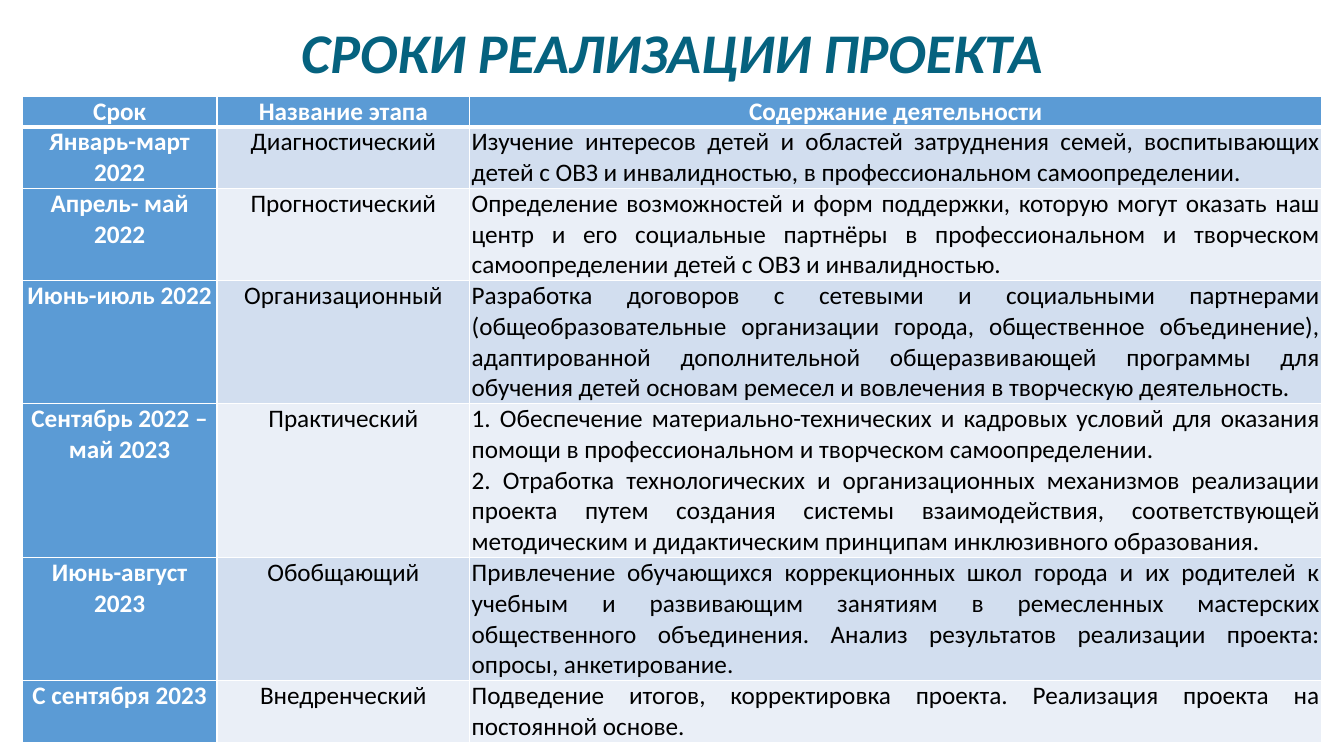
import pptx
import pptx.dml.color
import pptx.enum.text
import pptx.oxml
import pptx.oxml.ns
import pptx.util
from dataclasses import dataclass

ALIGN = pptx.enum.text.PP_ALIGN
WIDTH, HEIGHT = pptx.util.Inches(13.33), pptx.util.Inches(7.5)
FONT = "Calibri"
WHITE, BLACK, TEAL, BLUE = "FFFFFF", "000000", "05627F", "5B9BD5"
BANDS = ("D2DEEF", "EAEFF7")
COLUMN_SHARES = (0.145, 0.188, 0.634)
LINE_HEIGHT = pptx.util.Inches(0.3)


@dataclass(frozen=True)
class Stage:
    """One stage of the project and the number of text lines its row holds."""
    period: str
    name: str
    content: str
    lines: int


HEADER = Stage("Срок", "Название этапа", "Содержание деятельности", 1)
STAGES = (
    Stage("Январь-март 2022", "Диагностический",
          "Изучение интересов детей и областей затруднения семей, воспитывающих детей "
          "с ОВЗ и инвалидностью, в профессиональном самоопределении.", 2),
    Stage("Апрель- май 2022", "Прогностический",
          "Определение возможностей и форм поддержки, которую могут оказать наш центр "
          "и его социальные партнёры в профессиональном и творческом самоопределении "
          "детей с ОВЗ и инвалидностью.", 3),
    Stage("Июнь-июль 2022", "Организационный",
          "Разработка договоров с сетевыми и социальными партнерами (общеобразовательные "
          "организации города, общественное объединение), адаптированной дополнительной "
          "общеразвивающей программы для обучения детей основам ремесел и вовлечения "
          "в творческую деятельность.", 4),
    Stage("Сентябрь 2022 – май 2023", "Практический",
          "1. Обеспечение материально-технических и кадровых условий для оказания помощи "
          "в профессиональном и творческом самоопределении.\n"
          "2. Отработка технологических и организационных механизмов реализации проекта "
          "путем создания системы взаимодействия, соответствующей методическим "
          "и дидактическим принципам инклюзивного образования.", 5),
    Stage("Июнь-август\n2023", "Обобщающий",
          "Привлечение обучающихся коррекционных школ города и их родителей к учебным "
          "и развивающим занятиям в ремесленных мастерских общественного объединения. "
          "Анализ результатов реализации проекта: опросы, анкетирование.", 4),
    Stage("С сентября 2023", "Внедренческий",
          "Подведение итогов, корректировка проекта. Реализация проекта на постоянной "
          "основе.", 2),
)


def rgb(value: str) -> pptx.dml.color.RGBColor:
    """Turn a hex string into a colour."""
    return pptx.dml.color.RGBColor.from_string(value)


def write(tf, text: str, size: float, color: str, align: ALIGN,
          bold: bool = False, italic: bool = False) -> None:
    """Fill a text frame, one paragraph for each line of the text."""
    for i, line in enumerate(text.split("\n")):
        p = tf.add_paragraph() if i else tf.paragraphs[0]
        p.alignment = align
        r = p.add_run()
        r.text = line
        r.font.name, r.font.size = FONT, pptx.util.Pt(size)
        r.font.bold, r.font.italic = bold, italic
        r.font.color.rgb = rgb(color)


def set_borders(cell, bottom: float) -> None:
    """Draw white cell borders, 1 pt wide except for the bottom one."""
    tc_pr = cell._tc.get_or_add_tcPr()
    for side, width in (("L", 1), ("R", 1), ("T", 1), ("B", bottom)):
        tc_pr.append(pptx.oxml.parse_xml(
            f'<a:ln{side} {pptx.oxml.ns.nsdecls("a")} w="{pptx.util.Pt(width)}">'
            f'<a:solidFill><a:srgbClr val="{WHITE}"/></a:solidFill></a:ln{side}>'))


def add_title(s, text: str) -> None:
    """Place and format the slide title."""
    sp = s.shapes.title
    sp.left, sp.top = int(0.2 * WIDTH), int(0.016 * HEIGHT)
    sp.width, sp.height = int(0.6 * WIDTH), int(0.103 * HEIGHT)
    write(sp.text_frame, text, 40, TEAL, ALIGN.CENTER, bold=True, italic=True)


def add_schedule(s, rows: tuple[Stage, ...]) -> None:
    """Draw the schedule with a header row, a blue first column and banded rows."""
    table = s.shapes.add_table(
        len(rows), len(COLUMN_SHARES), int(0.0165 * WIDTH), int(0.127 * HEIGHT),
        int(sum(COLUMN_SHARES) * WIDTH), LINE_HEIGHT * sum(row.lines for row in rows)).table
    table.first_col = True
    for column, share in zip(table.columns, COLUMN_SHARES):
        column.width = int(share * WIDTH)
    for i, stage in enumerate(rows):
        table.rows[i].height = LINE_HEIGHT * stage.lines
        for j, text in enumerate((stage.period, stage.name, stage.content)):
            cell = table.cell(i, j)
            head = i == 0 or j == 0
            cell.margin_left = cell.margin_right = pptx.util.Inches(0.02)
            cell.margin_top = cell.margin_bottom = 0
            set_borders(cell, 3 if i == 0 else 1)
            cell.fill.solid()
            cell.fill.fore_color.rgb = rgb(BLUE if head else BANDS[(i - 1) % 2])
            align = ALIGN.JUSTIFY if i and j == 2 else ALIGN.CENTER
            write(cell.text_frame, text, 18, WHITE if head else BLACK, align, bold=head)


def main() -> None:
    """Build the slide and save it."""
    prs = pptx.Presentation()
    prs.slide_width, prs.slide_height = WIDTH, HEIGHT
    s = prs.slides.add_slide(prs.slide_layouts[5])
    add_title(s, "СРОКИ РЕАЛИЗАЦИИ ПРОЕКТА")
    add_schedule(s, (HEADER, *STAGES))
    prs.save("out.pptx")


if __name__ == "__main__":
    main()
